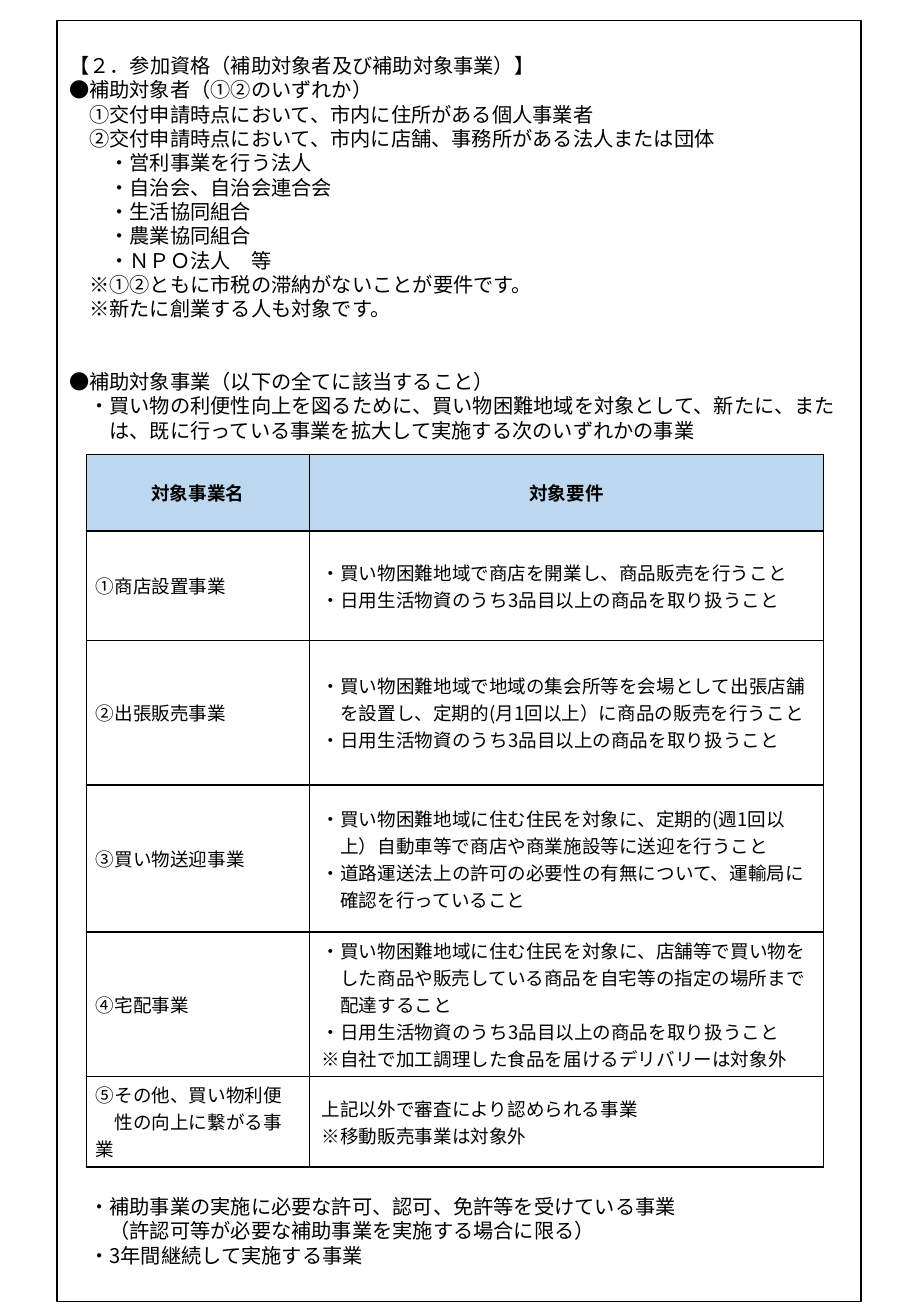
from lxml import etree
from pptx import Presentation
from pptx.dml.color import RGBColor
from pptx.enum import shapes, text
from pptx.oxml import ns
from pptx.util import Inches, Pt

FONT = "Noto Sans CJK JP"
COLORS = {"ink": "000000", "header": "BDD7EE", "cell": "FFFFFF"}
BODY_SIZE, TABLE_SIZE = 12, 11
LINE_PITCH = 14.4
FRAME_LEFT, FRAME_TOP, FRAME_WIDTH, FRAME_HEIGHT = 0.47, 0.17, 6.62, 10.54
TITLE_TOP, BODY_TOP, CLOSING_TOP = 0.44, 0.64, 9.83
SIDE_INSET = 0.1

TITLE = "【２．参加資格（補助対象者及び補助対象事業）】"
SECOND_HEADING = "●補助対象事業（以下の全てに該当すること）"

# Each line is (indent in full-width characters, wording).
BODY = [
    (0, "●補助対象者（①②のいずれか）"),
    (1, "①交付申請時点において、市内に住所がある個人事業者"),
    (1, "②交付申請時点において、市内に店舗、事務所がある法人または団体"),
    (2, "・営利事業を行う法人"),
    (2, "・自治会、自治会連合会"),
    (2, "・生活協同組合"),
    (2, "・農業協同組合"),
    (2, "・ＮＰＯ法人　等"),
    (1, "※①②ともに市税の滞納がないことが要件です。"),
    (1, "※新たに創業する人も対象です。"),
    (0, SECOND_HEADING),
    (1, "・買い物の利便性向上を図るために、買い物困難地域を対象として、新たに、また"),
    (2, "は、既に行っている事業を拡大して実施する次のいずれかの事業"),
]
CLOSING = [
    (1, "・補助事業の実施に必要な許可、認可、免許等を受けている事業"),
    (2, "（許認可等が必要な補助事業を実施する場合に限る）"),
    (1, "・3年間継続して実施する事業"),
]

GOODS_RULE = (0, "・日用生活物資のうち3品目以上の商品を取り扱うこと")
COLUMN_WIDTHS = [1.84, 4.23]
# Each row is (height, project name lines, requirement lines).
ROWS = [
    (0.63, [(0, "対象事業名")], [(0, "対象要件")]),
    (0.9, [(0, "①商店設置事業")], [
        (0, "・買い物困難地域で商店を開業し、商品販売を行うこと"),
        GOODS_RULE]),
    (1.19, [(0, "②出張販売事業")], [
        (0, "・買い物困難地域で地域の集会所等を会場として出張店舗"),
        (1, "を設置し、定期的(月1回以上）に商品の販売を行うこと"),
        GOODS_RULE]),
    (1.21, [(0, "③買い物送迎事業")], [
        (0, "・買い物困難地域に住む住民を対象に、定期的(週1回以"),
        (1, "上）自動車等で商店や商業施設等に送迎を行うこと"),
        (0, "・道路運送法上の許可の必要性の有無について、運輸局に"),
        (1, "確認を行っていること")]),
    (1.13, [(0, "④宅配事業")], [
        (0, "・買い物困難地域に住む住民を対象に、店舗等で買い物を"),
        (1, "した商品や販売している商品を自宅等の指定の場所まで"),
        (1, "配達すること"),
        GOODS_RULE,
        (0, "※自社で加工調理した食品を届けるデリバリーは対象外")]),
    (0.71, [(0, "⑤その他、買い物利便"), (1, "性の向上に繋がる事業")], [
        (0, "上記以外で審査により認められる事業"),
        (0, "※移動販売事業は対象外")]),
]


def rgb(name):
    return RGBColor.from_string(COLORS[name])


def write_lines(text_frame, lines, size, bold=False,
                alignment=text.PP_ALIGN.LEFT, pitch=None):
    """Write one paragraph per line, indented by whole characters."""
    text_frame.text = "\n".join(wording for _, wording in lines)
    for paragraph, (indent, _) in zip(text_frame.paragraphs, lines):
        paragraph.alignment = alignment
        if pitch:
            paragraph.line_spacing = Pt(pitch)
        properties = paragraph._p.get_or_add_pPr()
        properties.set("marL", "0")
        properties.set("indent", str(Pt(indent * size)))
        for run in paragraph.runs:
            run.font.name = FONT
            run.font.size = Pt(size)
            run.font.bold = bold
            run.font.color.rgb = rgb("ink")
            east_asian = etree.SubElement(run._r.get_or_add_rPr(), ns.qn("a:ea"))
            east_asian.set("typeface", FONT)


def write_block(shape, lines, top_inset=0):
    """Write top-anchored body text with the page's line pitch."""
    text_frame = shape.text_frame
    text_frame.word_wrap = True
    text_frame.auto_size = text.MSO_AUTO_SIZE.NONE
    text_frame.vertical_anchor = text.MSO_ANCHOR.TOP
    text_frame.margin_left = text_frame.margin_right = Inches(SIDE_INSET)
    text_frame.margin_top = Inches(top_inset)
    text_frame.margin_bottom = 0
    write_lines(text_frame, lines, BODY_SIZE, pitch=LINE_PITCH)


def add_title(slide):
    title = slide.shapes.title
    title.left, title.top = Inches(FRAME_LEFT), Inches(TITLE_TOP)
    title.width, title.height = Inches(FRAME_WIDTH), Inches(0.2)
    write_block(title, [(0, TITLE)])


def add_frame(slide):
    """Add the page border, which holds the body text."""
    frame = slide.shapes.add_shape(
        shapes.MSO_SHAPE.RECTANGLE, Inches(FRAME_LEFT), Inches(FRAME_TOP),
        Inches(FRAME_WIDTH), Inches(FRAME_HEIGHT))
    frame.shadow.inherit = False
    frame.fill.background()
    frame.line.color.rgb = rgb("ink")
    frame.line.width = Pt(1)
    write_block(frame, BODY, BODY_TOP - FRAME_TOP)
    for paragraph in frame.text_frame.paragraphs:
        if paragraph.text == SECOND_HEADING:
            paragraph.space_before = Pt(2 * LINE_PITCH)


def add_closing(slide):
    closing = slide.shapes.add_textbox(
        Inches(FRAME_LEFT), Inches(CLOSING_TOP), Inches(FRAME_WIDTH), Inches(0.6))
    write_block(closing, CLOSING)


def set_borders(cell):
    properties = cell._tc.get_or_add_tcPr()
    for position, side in enumerate(("lnL", "lnR", "lnT", "lnB")):
        line = etree.Element(ns.qn(f"a:{side}"), w=str(Pt(1)))
        fill = etree.SubElement(line, ns.qn("a:solidFill"))
        etree.SubElement(fill, ns.qn("a:srgbClr"), val=COLORS["ink"])
        properties.insert(position, line)


def fill_cell(cell, lines, side_inset, is_header):
    cell.fill.solid()
    cell.fill.fore_color.rgb = rgb("header" if is_header else "cell")
    cell.vertical_anchor = text.MSO_ANCHOR.MIDDLE
    cell.margin_left = cell.margin_right = Inches(side_inset)
    cell.margin_top = cell.margin_bottom = Inches(0.04)
    alignment = text.PP_ALIGN.CENTER if is_header else text.PP_ALIGN.LEFT
    write_lines(cell.text_frame, lines, TABLE_SIZE, is_header, alignment)
    set_borders(cell)


def add_project_table(slide):
    height = sum(row[0] for row in ROWS)
    table = slide.shapes.add_table(
        len(ROWS), len(COLUMN_WIDTHS), Inches(0.71), Inches(3.74),
        Inches(sum(COLUMN_WIDTHS)), Inches(height)).table
    table.horz_banding = False
    for column, width in zip(table.columns, COLUMN_WIDTHS):
        column.width = Inches(width)
    for index, (row_height, name, requirements) in enumerate(ROWS):
        is_header = index == 0
        table.rows[index].height = Inches(row_height)
        fill_cell(table.cell(index, 0), name, 0.08, is_header)
        fill_cell(table.cell(index, 1), requirements,
                  0.08 if is_header else 0.1, is_header)


def main():
    presentation = Presentation()
    presentation.slide_width = Inches(7.5)
    presentation.slide_height = Inches(10.83)
    slide = presentation.slides.add_slide(presentation.slide_layouts[5])
    add_title(slide)
    add_frame(slide)
    add_project_table(slide)
    add_closing(slide)
    presentation.save("out.pptx")


if __name__ == "__main__":
    main()
